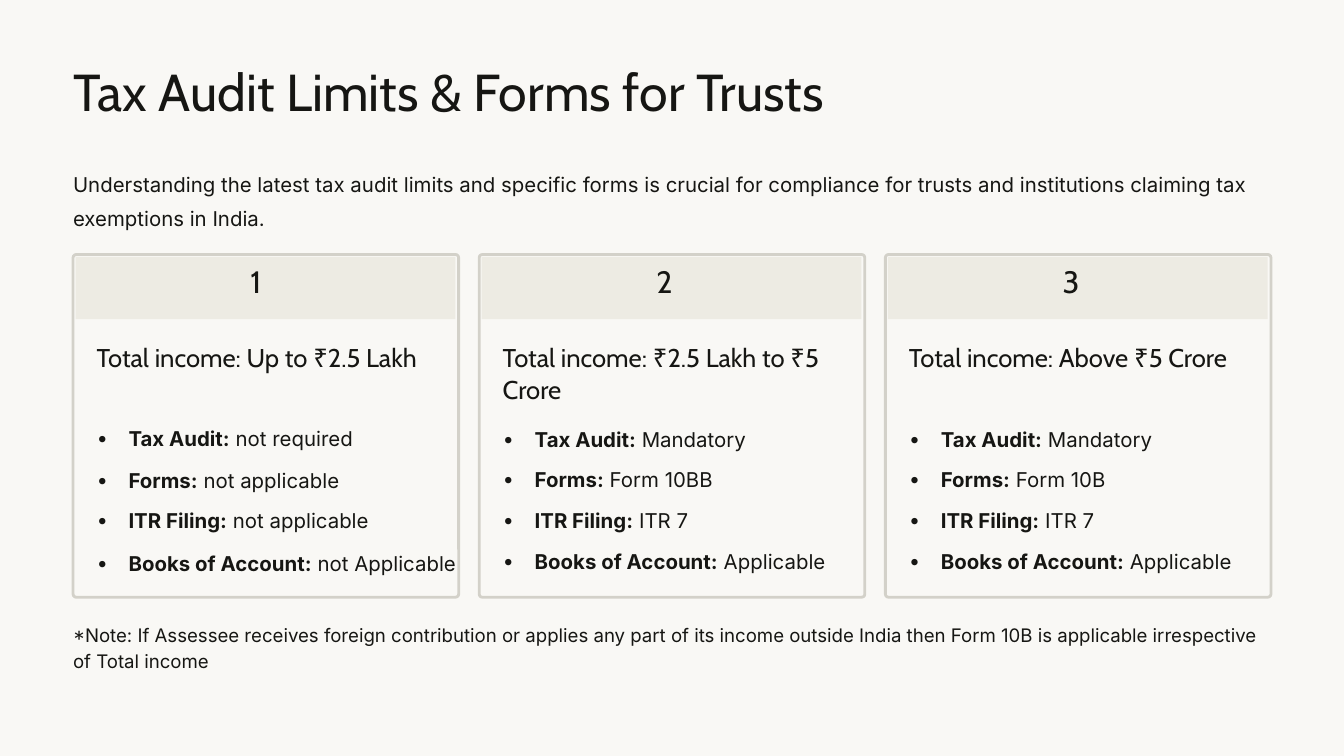
from lxml import etree
from pptx import Presentation
from pptx.dml.color import RGBColor
from pptx.enum.shapes import MSO_SHAPE as Preset
from pptx.oxml.ns import qn
from pptx.util import Inches, Pt

INK = RGBColor(0x16, 0x16, 0x13)
PAPER = RGBColor(0xF9, 0xF8, 0xF5)
BAND = RGBColor(0xED, 0xEB, 0xE3)
BORDER = RGBColor(0xD3, 0xD1, 0xC9)
HEADING_FONT, BODY_FONT = "Cabin", "Inter"

MARGIN, CONTENT_WIDTH = 0.87, 14.26
CARD_TOP, CARD_WIDTH, CARD_HEIGHT = 3.03, 4.59, 4.08
CARD_STEP = (CONTENT_WIDTH - CARD_WIDTH) / 2
CARD_PADDING = 0.28
EVEN_ROWS = (1.95, 2.43, 2.91, 3.4)
LABELS = ("Tax Audit:", "Forms:", "ITR Filing:", "Books of Account:")
CARDS = [
    ("Total income: Up to ₹2.5 Lakh", (1.94, 2.44, 2.91, 3.43),
     ("not required", "not applicable", "not applicable", "not Applicable")),
    ("Total income: ₹2.5 Lakh to ₹5 Crore", EVEN_ROWS,
     ("Mandatory", "Form 10BB", "ITR 7", "Applicable")),
    ("Total income: Above ₹5 Crore", EVEN_ROWS,
     ("Mandatory", "Form 10B", "ITR 7", "Applicable")),
]
TITLE = "Tax Audit Limits & Forms for Trusts"
INTRO = ("Understanding the latest tax audit limits and specific forms is crucial for "
         "compliance for trusts and institutions claiming tax exemptions in India.")
NOTE = ("*Note: If Assessee receives foreign contribution or applies any part of its "
        "income outside India then Form 10B is applicable irrespective",
        "of Total income")


def add_text(slide, box, paragraphs, font, size, spacing, wrap=False):
    """Add a text box without insets; each paragraph is a list of (text, bold) runs."""
    frame = slide.shapes.add_textbox(*map(Inches, box)).text_frame
    frame.margin_left = frame.margin_right = frame.margin_top = frame.margin_bottom = 0
    frame.word_wrap = wrap
    for index, runs in enumerate(paragraphs):
        paragraph = frame.add_paragraph() if index else frame.paragraphs[0]
        paragraph.line_spacing = Pt(spacing)
        paragraph.font.name = font
        paragraph.font.size = Pt(size)
        paragraph.font.color.rgb = INK
        for text, bold in runs:
            run = paragraph.add_run()
            run.text = text
            run.font.bold = bold
    return frame


def add_panel(slide, preset, box, fill):
    """Add a flat filled shape without a line."""
    shape = slide.shapes.add_shape(preset, *map(Inches, box))
    shape.shadow.inherit = False
    shape.fill.solid()
    shape.fill.fore_color.rgb = fill
    shape.line.fill.background()
    return shape


def add_bullet(slide, box, label, value):
    """Add one bulleted line with a bold label."""
    runs = [(label, True), (f" {value}", False)]
    frame = add_text(slide, box, [runs], BODY_FONT, 17.5, 28.5)
    properties = frame.paragraphs[0]._p.get_or_add_pPr()
    properties.set("marL", str(Inches(0.38)))
    properties.set("indent", str(Inches(-0.38)))
    bullet_font = etree.Element(qn("a:buFont"), typeface=BODY_FONT)
    properties.find(qn("a:lnSpc")).addnext(bullet_font)
    bullet_font.addnext(etree.Element(qn("a:buChar"), char="•"))


def add_card(slide, box, number, heading, rows, values):
    """Add a numbered card with a heading and four bulleted lines."""
    left, top, width, height = box
    frame = add_panel(slide, Preset.ROUNDED_RECTANGLE, box, PAPER)
    frame.adjustments[0] = 0.009
    frame.line.color.rgb = BORDER
    frame.line.width = Pt(2.4)
    add_panel(slide, Preset.RECTANGLE, (left + 0.03, top + 0.03, width - 0.07, 0.74), BAND)
    add_text(slide, (left + 2.11, top + 0.17, 0.37, 0.47), [[(str(number), None)]],
             HEADING_FONT, 26.5, 26.5)
    inner_left = left + CARD_PADDING
    add_text(slide, (inner_left, top + 1.02, width - 2 * CARD_PADDING, 0.78),
             [[(heading, None)]], HEADING_FONT, 22, 27.5, wrap=True)
    for row, label, value in zip(rows, LABELS, values):
        add_bullet(slide, (inner_left, top + row, width - CARD_PADDING, 0.4), label, value)


def add_header(slide, left, top, width):
    """Add the title and the introduction below it."""
    add_text(slide, (left, top, 10.16, 0.78), [[(TITLE, None)]], HEADING_FONT, 44.5, 55.5)
    add_text(slide, (left, top + 1.27, width, 0.79), [[(INTRO, None)]],
             BODY_FONT, 17.5, 28.5, wrap=True)


def main():
    """Build and save the slide."""
    presentation = Presentation()
    presentation.slide_width, presentation.slide_height = Inches(16), Inches(9)
    slide = presentation.slides.add_slide(presentation.slide_layouts[6])
    slide.background.fill.solid()
    slide.background.fill.fore_color.rgb = PAPER
    add_header(slide, MARGIN, 0.68, CONTENT_WIDTH)
    for index, card in enumerate(CARDS):
        box = (MARGIN + index * CARD_STEP, CARD_TOP, CARD_WIDTH, CARD_HEIGHT)
        add_card(slide, box, index + 1, *card)
    add_text(slide, (MARGIN, 7.38, CONTENT_WIDTH, 0.32),
             [[(line, None)] for line in NOTE], BODY_FONT, 16, 22.5)
    presentation.save("out.pptx")


if __name__ == "__main__":
    main()
